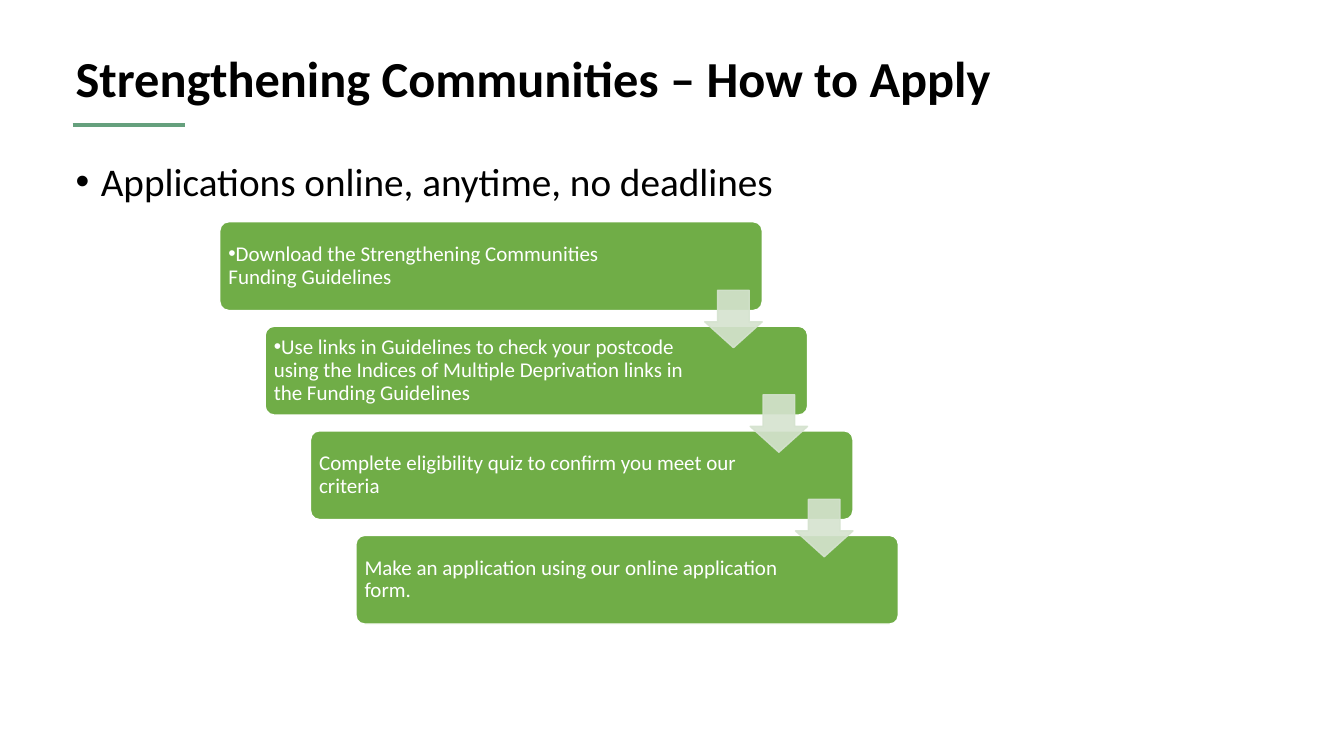
import pptx
import pptx.util
import pptx.dml.color
import pptx.enum.shapes
import pptx.enum.text
import pptx.oxml.ns
from dataclasses import dataclass
from lxml import etree

TITLE = "Strengthening Communities – How to Apply"
INTRO = "Applications online, anytime, no deadlines"
# (step, has a bullet)
STEPS = [
    ("Download the Strengthening Communities Funding Guidelines", True),
    ("Use links in Guidelines to check your postcode using the Indices of "
     "Multiple Deprivation links in the Funding Guidelines", True),
    ("Complete eligibility quiz to confirm you meet our criteria", False),
    ("Make an application using our online application form.", False),
]


@dataclass(frozen=True)
class Theme:
    font: str = "Calibri"
    text: str = "000000"
    step_text: str = "FFFFFF"
    step: str = "70AD47"
    step_edge: str = "FFFFFF"
    arrow: str = "D5E3CF"
    arrow_alpha: int = 90
    rule: str = "65A07D"
    title_size: int = 36
    intro_size: int = 28
    step_size: int = 15


THEME = Theme()
SLIDE = (13.33, 7.5)
STEP_ORIGIN, STEP_SIZE, STEP_SHIFT = (2.18, 2.2), (5.38, 0.88), (0.45, 1.037)
ARROW_ORIGIN, ARROW_SIDE = (6.99, 2.88), 0.57
STEP_INSETS = (0.06, 0.06, 1.07, 0.06)

Inches, Pt = pptx.util.Inches, pptx.util.Pt
SHAPES = pptx.enum.shapes.MSO_SHAPE
qn = pptx.oxml.ns.qn


def rgb(code):
    return pptx.dml.color.RGBColor.from_string(code)


def stair(origin, index):
    return [start + index * shift for start, shift in zip(origin, STEP_SHIFT)]


def place(shape, *box):
    shape.left, shape.top, shape.width, shape.height = map(Inches, box)


def write(shape, words, size, color, anchor, bold=False, spacing=1.0):
    frame = shape.text_frame
    frame.text = words
    frame.word_wrap = True
    frame.auto_size = pptx.enum.text.MSO_AUTO_SIZE.NONE
    frame.vertical_anchor = anchor
    paragraph = frame.paragraphs[0]
    paragraph.alignment = pptx.enum.text.PP_ALIGN.LEFT
    paragraph.line_spacing = spacing
    font = paragraph.runs[0].font
    font.name, font.size, font.bold = THEME.font, Pt(size), bold
    font.color.rgb = rgb(color)
    return paragraph


def add_bullet(paragraph, indent=0):
    properties = paragraph._p.get_or_add_pPr()
    properties.set("marL", str(Inches(indent)))
    properties.set("indent", str(-Inches(indent)))
    etree.SubElement(properties, qn("a:buFont"), typeface="Arial")
    etree.SubElement(properties, qn("a:buChar"), char="•")


def add_filled(slide, kind, box, fill, edge, adjustments):
    shape = slide.shapes.add_shape(kind, *map(Inches, box))
    shape.shadow.inherit = False
    shape.fill.solid()
    shape.fill.fore_color.rgb = rgb(fill)
    shape.line.color.rgb = rgb(edge)
    shape.line.width = Pt(1)
    for index, value in enumerate(adjustments):
        shape.adjustments[index] = value
    return shape


def add_header(slide):
    top = pptx.enum.text.MSO_ANCHOR.TOP
    title, intro = slide.shapes.title, slide.placeholders[1]
    place(title, 0.65, 0.42, 10.71, 1.01)
    write(title, TITLE, THEME.title_size, THEME.text, top, bold=True)
    place(intro, 0.65, 1.56, 12.14, 0.53)
    line = write(intro, INTRO, THEME.intro_size, THEME.text, top, spacing=0.9)
    line.space_before = Pt(10)
    add_bullet(line, 0.25)

    rule = slide.shapes.add_connector(
        pptx.enum.shapes.MSO_CONNECTOR.STRAIGHT,
        *map(Inches, (0.72, 1.24, 1.83, 1.24)))
    rule.line.color.rgb = rgb(THEME.rule)
    rule.line.width = Pt(3)
    etree.SubElement(rule._element.spPr, qn("a:effectLst"))


def add_step(slide, index, words, bulleted):
    box = (*stair(STEP_ORIGIN, index), *STEP_SIZE)
    step = add_filled(slide, SHAPES.ROUNDED_RECTANGLE, box,
                      THEME.step, THEME.step_edge, [0.1])
    frame = step.text_frame
    (frame.margin_left, frame.margin_top,
     frame.margin_right, frame.margin_bottom) = map(Inches, STEP_INSETS)
    line = write(step, words, THEME.step_size, THEME.step_text,
                 pptx.enum.text.MSO_ANCHOR.MIDDLE, spacing=0.9)
    if bulleted:
        add_bullet(line)


def add_arrow(slide, index):
    box = (*stair(ARROW_ORIGIN, index), ARROW_SIDE, ARROW_SIDE)
    arrow = add_filled(slide, SHAPES.DOWN_ARROW, box,
                       THEME.arrow, THEME.arrow, [0.55, 0.45])
    for color in arrow._element.spPr.iter(qn("a:srgbClr")):
        etree.SubElement(color, qn("a:alpha"), val=str(THEME.arrow_alpha * 1000))


def main():
    deck = pptx.Presentation()
    deck.slide_width, deck.slide_height = map(Inches, SLIDE)
    slide = deck.slides.add_slide(deck.slide_layouts[1])
    add_header(slide)
    for index, (words, bulleted) in enumerate(STEPS):
        add_step(slide, index, words, bulleted)
    for index in range(len(STEPS) - 1):
        add_arrow(slide, index)
    deck.save("out.pptx")


if __name__ == "__main__":
    main()
